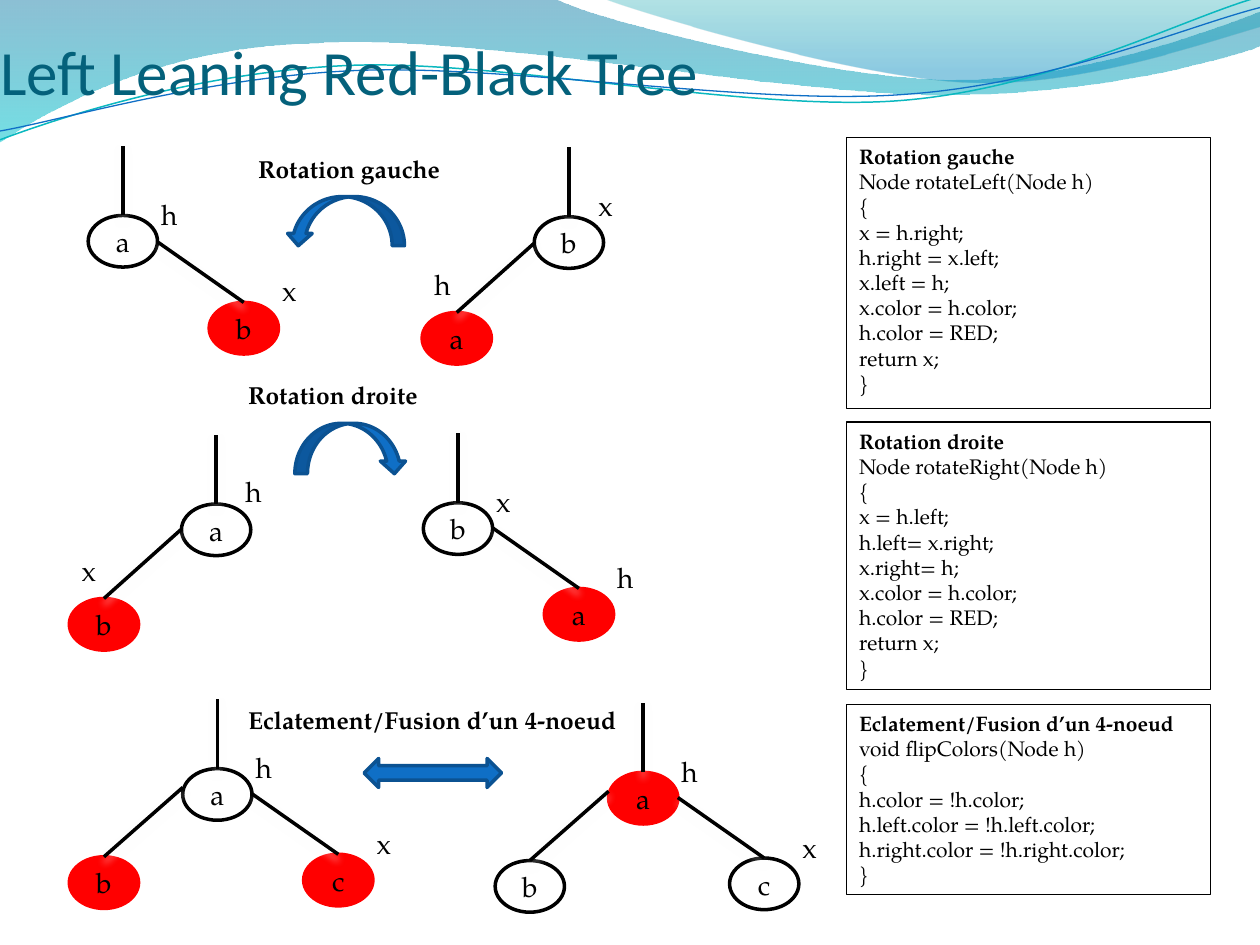
from lxml.etree import SubElement
from pptx import Presentation
from pptx.dml.color import RGBColor
from pptx.enum.shapes import MSO_CONNECTOR, MSO_SHAPE
from pptx.enum.text import MSO_ANCHOR, MSO_AUTO_SIZE, PP_ALIGN
from pptx.oxml.ns import qn
from pptx.util import Inches, Pt

FONT = "TeX Gyre Pagella"
NODE_WIDTH, NODE_HEIGHT, STEM = 0.55, 0.41, 0.55

# Waves: start point, then straight (2 numbers) or Bezier (6 numbers) segments
BANDS = [
    ([(0, 0), (4.4, -0.01), (4.76, 0.17, 6.64, 0.63, 7.58, 0.63),
      (8.53, 0.63, 9.58, 0.26, 10, 0.09), (10.01, 0.36),
      (9.83, 0.44, 8.7, 0.76, 7.46, 0.75), (6.22, 0.75, 3.82, 0.28, 2.57, 0.34),
      (1.29, 0.36, 0.46, 0.83, -0.01, 1.13), (0, 0)],
     [(0, "0074A1", 45), (1, "00C6CF", 55)]),
    ([(4.79, -0.01), (5.09, 0.11, 6.82, 0.62, 7.69, 0.65),
      (8.56, 0.69, 9.61, 0.32, 10, 0.21), (10, 0), (4.79, -0.01)],
     [(0, "00A1A9", 30), (0.8, "008BBF", 45)]),
]
STRANDS = [
    ([(0, 1.11), (0.48, 0.93, 1.58, 0.57, 2.77, 0.52),
      (3.95, 0.47, 5.93, 0.89, 7.13, 0.8), (8.33, 0.71, 9.38, 0.15, 9.98, -0.02)],
     "0AB8BF", 0.85),
    ([(0, 1.04), (0.47, 0.96, 1.64, 0.61, 2.83, 0.56),
      (4.03, 0.51, 5.97, 0.84, 7.17, 0.75), (8.36, 0.67, 9.41, 0.21, 10, 0.06)],
     "0F6FC6", 0.75),
]

# Trees: (left, top, label, is red) of the root and its children, then name tags
TREES = [
    ((0.7, 1.71, "a", False), [(1.66, 2.4, "b", True)],
     [("x", 2.14, 2.12), ("h", 1.18, 1.52)]),
    ((4.24, 1.72, "b", False), [(3.35, 2.48, "a", True)],
     [("x", 4.65, 1.45), ("h", 3.35, 2.07)]),
    ((1.44, 4, "a", False), [(0.55, 4.75, "b", True)],
     [("h", 1.85, 3.72), ("x", 0.55, 4.34)]),
    ((3.36, 3.99, "b", False), [(4.32, 4.67, "a", True)],
     [("h", 4.8, 4.4), ("x", 3.84, 3.8)]),
    ((1.45, 6.1, "a", False), [(2.41, 6.78, "c", True), (0.55, 6.8, "b", True)],
     [("x", 2.89, 6.51), ("h", 1.93, 5.91)]),
    ((4.83, 6.13, "a", True), [(5.79, 6.81, "c", False), (3.93, 6.83, "b", False)],
     [("x", 6.27, 6.54), ("h", 5.31, 5.94)]),
]

# Operations: heading, its left, top and width, then code box top, height and lines
OPERATIONS = [
    ("Rotation gauche", 1.95, 1.17, 1.72, 1.09, 2.15,
     ["Node rotateLeft(Node h)", "{", "x = h.right;", "h.right = x.left;",
      "x.left = h;", "x.color = h.color;", "h.color = RED;", "return x;", "}"]),
    ("Rotation droite", 1.87, 2.97, 1.68, 3.35, 2.12,
     ["Node rotateRight(Node h)", "{", "x = h.left;", "h.left= x.right;",
      "x.right= h;", "x.color = h.color;", "h.color = RED;", "return x;", "}"]),
    ("Eclatement/Fusion d’un 4-noeud", 1.87, 5.55, 3.22, 5.59, 1.51,
     ["void flipColors(Node h)", "{", "h.color = !h.color;",
      "h.left.color = !h.left.color;", "h.right.color = !h.right.color;", "}"]),
]

ARROWS = [
    (MSO_SHAPE.LEFT_RIGHT_ARROW, 2.89, 6.02, 1.09, 0.23, 0),
    (MSO_SHAPE.CURVED_UP_ARROW, 2.27, 1.56, 0.94, 0.39, 180),
    (MSO_SHAPE.CURVED_DOWN_ARROW, 2.34, 3.36, 0.89, 0.4, 0),
]


def color(value):
    return RGBColor.from_string(value)


def format_text(frame, size, font=FONT, fill="000000", align=PP_ALIGN.LEFT, bold=False):
    for paragraph in frame.paragraphs:
        paragraph.alignment = align
        for span in paragraph.runs:
            span.font.size, span.font.name, span.font.bold = Pt(size), font, bold
            span.font.color.rgb = color(fill)


def set_line(shape, value, width):
    shape.line.color.rgb = color(value)
    shape.line.width = Pt(width)


def add_figure(shapes, kind, left, top, width, height, fill, line, weight):
    figure = shapes.add_shape(kind, Inches(left), Inches(top), Inches(width), Inches(height))
    figure.shadow.inherit = False
    if fill:
        figure.fill.solid()
        figure.fill.fore_color.rgb = color(fill)
    else:
        figure.fill.background()
    set_line(figure, line, weight)
    return figure


def add_label(shapes, text, left, top, width, height, size, bold=False):
    box = shapes.add_textbox(Inches(left), Inches(top), Inches(width), Inches(height))
    box.text_frame.word_wrap = False
    box.text_frame.auto_size = MSO_AUTO_SIZE.SHAPE_TO_FIT_TEXT
    box.text_frame.text = text
    format_text(box.text_frame, size, bold=bold)


def add_wave(page, segments, closed):
    """Draw lines through all points, then turn each Bezier triple into one curve."""
    points = [(Inches(x), Inches(y)) for segment in segments
              for x, y in zip(segment[::2], segment[1::2])]
    builder = page.shapes.build_freeform(*points[0])
    builder.add_line_segments(points[1:], close=closed)
    wave = builder.convert_to_shape()
    wave.shadow.inherit = False
    lines = iter(list(wave._element.spPr.iter(qn("a:lnTo"))))
    for segment in segments[1:]:
        first = next(lines)
        if len(segment) == 6:
            curve = SubElement(first.getparent(), qn("a:cubicBezTo"))
            first.addprevious(curve)
            for line in (first, next(lines), next(lines)):
                curve.append(line[0])
                line.getparent().remove(line)
    return wave


def add_band(page, segments, stops):
    band = add_wave(page, segments, True)
    band.line.fill.background()
    band.fill.gradient()
    band.fill.gradient_angle = 270
    for stop, (position, value, _) in zip(band.fill.gradient_stops, stops):
        stop.position = position
        stop.color.rgb = color(value)
    for node, (_, _, opacity) in zip(band._element.spPr.iter(qn("a:srgbClr")), stops):
        SubElement(node, qn("a:alpha"), val=str(opacity * 1000))


def add_edge(shapes, start, end):
    edge = shapes.add_connector(MSO_CONNECTOR.STRAIGHT, *map(Inches, (*start, *end)))
    set_line(edge, "000000", 2)
    # Soft light shadow straight below the line
    effects = SubElement(edge._element.spPr, qn("a:effectLst"))
    shadow = SubElement(effects, qn("a:outerShdw"), blurRad=str(Pt(4.5)),
                        dist=str(Pt(3)), dir="5400000", rotWithShape="0")
    shade = SubElement(shadow, qn("a:srgbClr"), val="FFFFFF")
    SubElement(shade, qn("a:alpha"), val="48000")


def add_node(shapes, left, top, label, is_red):
    fill, line = ("FF0000", "FF0000") if is_red else ("FFFFFF", "000000")
    node = add_figure(shapes, MSO_SHAPE.OVAL, left, top, NODE_WIDTH, NODE_HEIGHT, fill, line, 2)
    node.text_frame.text = label
    node.text_frame.vertical_anchor = MSO_ANCHOR.MIDDLE
    format_text(node.text_frame, 16, align=PP_ALIGN.CENTER)


def add_tree(page, root, children, tags):
    shapes = page.shapes.add_group_shape().shapes
    left, top = root[:2]
    middle = left + NODE_WIDTH / 2
    for node in (root, *children):
        add_node(shapes, *node)
    add_edge(shapes, (middle, top), (middle, top - STEM))
    for child_left, child_top, *_ in children:
        if child_left > left:
            start = (left + NODE_WIDTH, child_top - 0.48)
        else:
            start = (left, child_top - 0.55)
        add_edge(shapes, start, (child_left + NODE_WIDTH / 2, child_top))
    for text, tag_left, tag_top in tags:
        add_label(shapes, text, tag_left, tag_top, 0.3, 0.35, 16)


def add_code(page, heading, lines, top, height):
    box = add_figure(page.shapes, MSO_SHAPE.RECTANGLE, 6.72, top, 2.89, height,
                     None, "000000", 0.75)
    frame = box.text_frame
    frame.word_wrap = True
    frame.auto_size = MSO_AUTO_SIZE.SHAPE_TO_FIT_TEXT
    frame.vertical_anchor = MSO_ANCHOR.TOP
    frame.text = "\n".join([heading, *lines])
    format_text(frame, 12)
    frame.paragraphs[0].runs[0].font.bold = True


def add_title(page, text):
    title = page.shapes.title
    title.left, title.top, title.width, title.height = map(Inches, (0, 0, 5.86, 0.86))
    frame = title.text_frame
    frame.text = text
    frame.margin_left = frame.margin_right = frame.margin_bottom = 0
    frame.vertical_anchor = MSO_ANCHOR.BOTTOM
    format_text(frame, 36, "Calibri", "04617B")
    page.shapes._spTree.append(title._element)  # in front of the waves


def main():
    deck = Presentation()
    deck.slide_width, deck.slide_height = Inches(10), Inches(7.5)
    page = deck.slides.add_slide(deck.slide_layouts[5])

    # Header waves
    for segments, stops in BANDS:
        add_band(page, segments, stops)
    for segments, value, width in STRANDS:
        strand = add_wave(page, segments, False)
        strand.fill.background()
        set_line(strand, value, width)

    # Code boxes and title
    for heading, *_, top, height, lines in OPERATIONS:
        add_code(page, heading, lines, top, height)
    add_title(page, "Left Leaning Red-Black Tree")

    # Trees, arrows between them and headings
    for tree in TREES:
        add_tree(page, *tree)
    for kind, left, top, width, height, rotation in ARROWS:
        arrow = add_figure(page.shapes, kind, left, top, width, height, "0F6FC6", "0B5292", 2)
        arrow.rotation = rotation
    for heading, left, top, width, *_ in OPERATIONS:
        add_label(page.shapes, heading, left, top, width, 0.34, 14, bold=True)

    deck.save("out.pptx")


if __name__ == "__main__":
    main()
